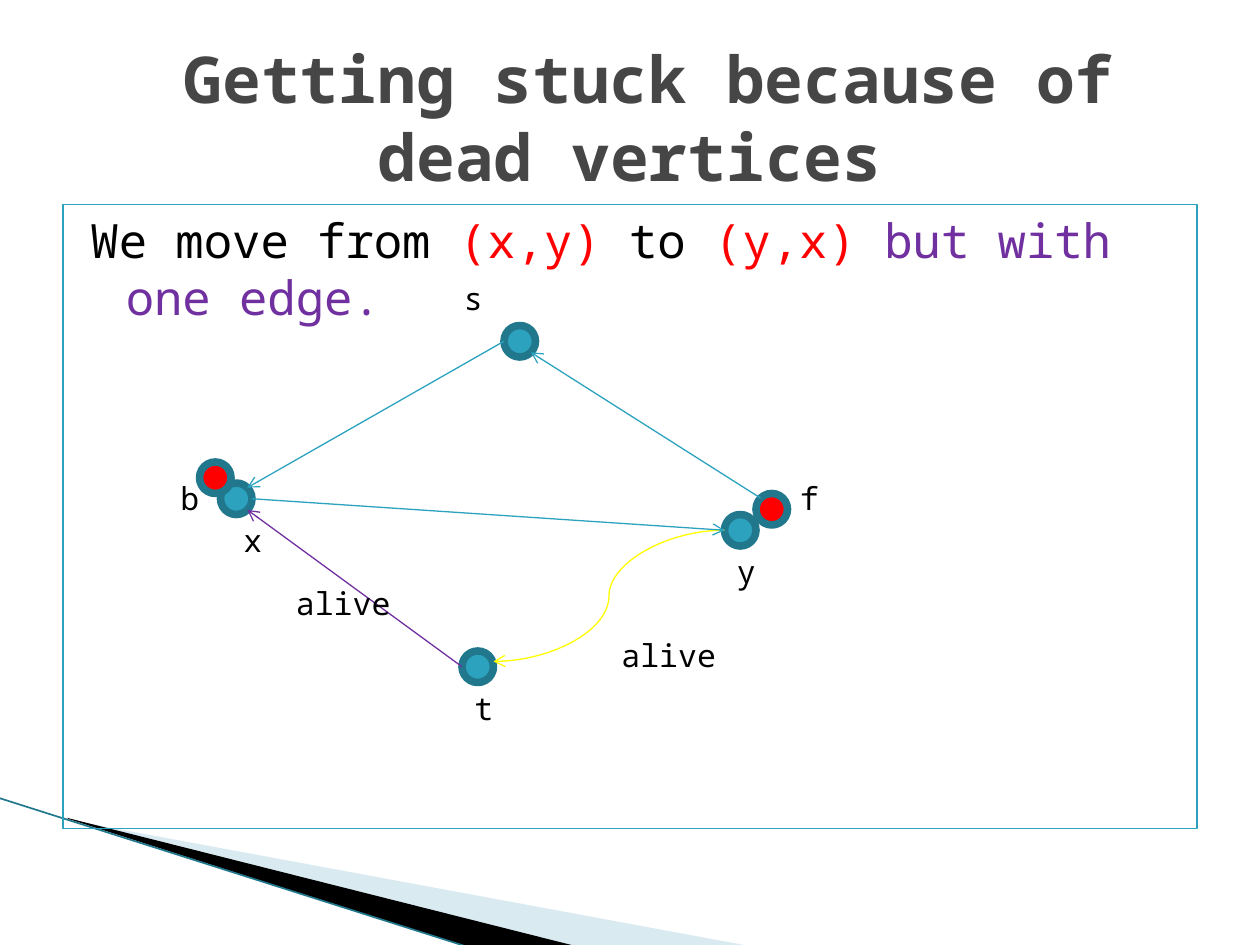
from lxml import etree
from pptx import Presentation
from pptx.dml.color import RGBColor
from pptx.enum.shapes import MSO_CONNECTOR, MSO_SHAPE
from pptx.enum.text import MSO_ANCHOR, MSO_AUTO_SIZE, PP_ALIGN
from pptx.oxml.ns import qn
from pptx.util import Inches, Pt
from math import cos, radians, sin

OVAL, RECT = MSO_SHAPE.OVAL, MSO_SHAPE.RECTANGLE
LINE, CURVE = MSO_CONNECTOR.STRAIGHT, MSO_CONNECTOR.CURVE
MID, TOP = MSO_ANCHOR.MIDDLE, MSO_ANCHOR.TOP
LEFT, CENTER = PP_ALIGN.LEFT, PP_ALIGN.CENTER
GROW = MSO_AUTO_SIZE.SHAPE_TO_FIT_TEXT
FONT = "Noto Sans Mono"
COLORS = {
    "teal": "2DA2BF", "rim": "21788D", "pale": "A0CBDC", "black": "000000",
    "red": "FF0000", "purple": "7030A0", "yellow": "FFFF00", "gray": "464646",
}
COLS, ROWS = 120, 90
DOT = 3


def color(name):
    """Return the named colour."""
    return RGBColor.from_string(COLORS[name])


def write(frame, runs, size=18, bold=False, align=LEFT, anchor=TOP, hang=None):
    """Fill a text frame with one paragraph of (text, colour) runs."""
    frame.word_wrap = True
    frame.vertical_anchor = anchor
    par = frame.paragraphs[0]
    par.alignment = align
    if hang:
        props = par._p.get_or_add_pPr()
        props.set("marL", str(Inches(hang[0])))
        props.set("indent", str(Inches(hang[1])))
    for text, tint in runs:
        run = par.add_run()
        run.text = text
        run.font.name = FONT
        run.font.size = Pt(size)
        run.font.bold = bold
        run.font.color.rgb = color(tint)


class Sketch:
    """Draws styled elements on one slide, in grid columns and rows."""

    def __init__(self, deck):
        """Add a blank slide and work out its grid."""
        self.slide = deck.slides.add_slide(deck.slide_layouts[6])
        self.shapes = self.slide.shapes
        self.col = deck.slide_width / COLS
        self.row = deck.slide_height / ROWS

    def grid(self, *vals):
        """Turn column and row pairs into lengths."""
        return [round(v * (self.row if i % 2 else self.col))
                for i, v in enumerate(vals)]

    def paint(self, shape, fill=None, line=None, width=0.75):
        """Set fill and outline, leaving out whatever is not named."""
        shape.shadow.inherit = False
        if fill:
            shape.fill.solid()
            shape.fill.fore_color.rgb = color(fill)
        else:
            shape.fill.background()
        if line:
            shape.line.color.rgb = color(line)
            shape.line.width = Pt(width)
        else:
            shape.line.fill.background()
        return shape

    def wedge(self, points, fill, alpha=None):
        """Draw a filled outline, see-through if alpha is given."""
        pts = [self.grid(*p) for p in points]
        form = self.shapes.build_freeform(*pts[0])
        form.add_line_segments(pts[1:])
        shape = self.paint(form.convert_to_shape(), fill)
        if alpha:
            tint = shape._element.spPr.find(".//" + qn("a:srgbClr"))
            etree.SubElement(tint, qn("a:alpha")).set("val", str(alpha * 1000))

    def panel(self, box, runs, **form):
        """Draw an outlined box with text."""
        shape = self.paint(self.shapes.add_shape(RECT, *self.grid(*box)), line="teal")
        write(shape.text_frame, runs, **form)

    def text(self, box, runs, grow=False, **form):
        """Add a text box."""
        frame = self.shapes.add_textbox(*self.grid(*box)).text_frame
        write(frame, runs, **form)
        if grow:
            frame.auto_size = GROW

    def dot(self, spot, fill):
        """Draw a graph vertex."""
        shape = self.shapes.add_shape(OVAL, *self.grid(*spot, DOT, DOT))
        self.paint(shape, fill, "rim", 4.33)

    def edge(self, start, end, tint="teal", kind=LINE, width=0.75, arrow=True):
        """Draw a line, with an arrowhead at its end if asked."""
        link = self.shapes.add_connector(kind, *self.grid(*start, *end))
        link.line.color.rgb = color(tint)
        link.line.width = Pt(width)
        if arrow:
            head = etree.SubElement(link.line._get_or_add_ln(), qn("a:tailEnd"))
            head.set("type", "arrow")
        etree.SubElement(link._element.spPr, qn("a:effectLst"))


def port(spot, angle):
    """Return the point on a vertex's rim at a clockwise angle from the right."""
    rad, turn = DOT / 2, radians(angle)
    return spot[0] + rad + rad * cos(turn), spot[1] + rad + rad * sin(turn)


def main():
    """Build the slide and save it."""
    deck = Presentation()
    deck.slide_width, deck.slide_height = Inches(10), Inches(7.5)
    pad = Sketch(deck)

    pad.wedge([(6.6, 78.1), (71.4, 90.1), (54.7, 90.1), (6.6, 78)], "pale", 40)
    pad.wedge([(6.4, 77.9), (54.8, 90.1), (44.6, 90.2), (6.5, 78)], "black")
    pad.edge((-0.1, 76), (44.6, 90.2), "rim", width=0.95, arrow=False)

    pad.panel((6, 19.5, 108, 59.4), [
        ("We move from ", "black"), ("(x,y) ", "red"), ("to ", "black"),
        ("(y,x) ", "red"), ("but with one edge.", "purple"),
    ], size=27, hang=(0.4, -0.28))
    pad.text((6, 3.6, 108, 15), [(" Getting stuck because of dead vertices", "gray")],
             size=36.9, bold=True, align=CENTER, anchor=MID)

    s, x, b, f, y, t = (48, 31), (21, 46), (19, 44), (72, 47), (69, 49), (44, 62)
    for spot, fill in ((s, "teal"), (x, "teal"), (b, "red"),
                       (f, "red"), (y, "teal"), (t, "teal")):
        pad.dot(spot, fill)

    pad.edge(port(y, 180), (47, 63), "yellow", CURVE)
    pad.edge(port(x, 0), port(y, 180))
    pad.edge(port(t, 180), port(x, 45), "purple")
    pad.edge(port(f, 225), port(s, 45))
    pad.edge(port(s, 180), port(x, -45))

    for word, left, top, wide in (
        ("s", 43, 26, 15), ("x", 22, 49, 14), ("y", 69, 52, 18),
        ("f", 75, 45, 28), ("t", 44, 65, 20), ("b", 16, 45, 18),
        ("alive", 58, 60, 16), ("alive", 27, 55, 14),
    ):
        pad.text((left, top, wide, 4.8), [(word, "black")], grow=True)

    deck.save("out.pptx")


if __name__ == "__main__":
    main()
